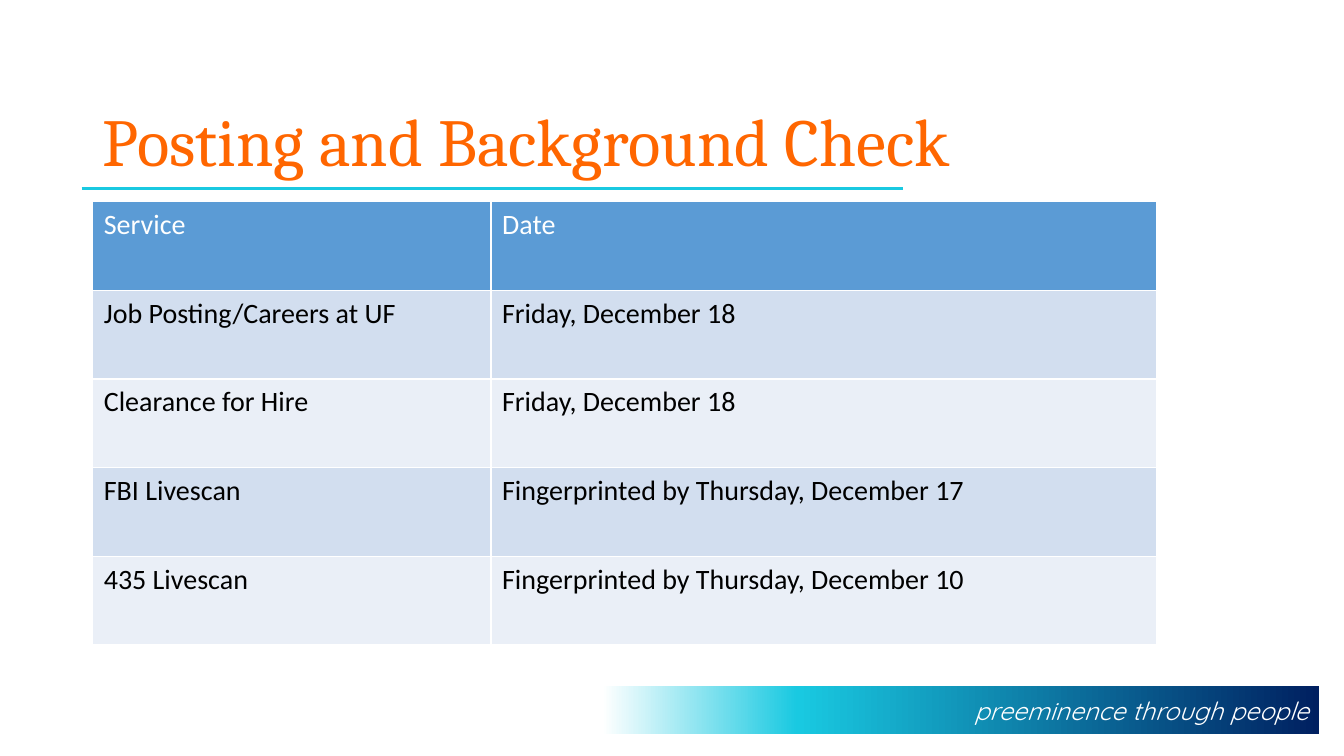
import copy

import pptx
import pptx.dml.color
import pptx.enum.shapes
import pptx.enum.text
import pptx.oxml.ns
import pptx.util
from lxml import etree

PX = 9144
WHITE, ORANGE, TEAL, NAVY = "FFFFFF", "FF6600", "19C9E1", "002060"
HEADER, BANDS = "5B9BD5", ("D2DEEF", "EAEFF7")
ROWS = [
    ("Service", "Date"),
    ("Job Posting/Careers at UF", "Friday, December 18"),
    ("Clearance for Hire", "Friday, December 18"),
    ("FBI Livescan", "Fingerprinted by Thursday, December 17"),
    ("435 Livescan", "Fingerprinted by Thursday, December 10"),
]


def px(*lengths):
    """Turn px lengths into a list of EMU."""
    return [pptx.util.Emu(length * PX) for length in lengths]


def color(value):
    """Turn a hex string into a colour."""
    return pptx.dml.color.RGBColor.from_string(value)


def style(run, name, size, hex_color, italic=False):
    """Set the font of a run."""
    run.font.name, run.font.size = name, pptx.util.Pt(size)
    run.font.bold, run.font.italic = False, italic
    run.font.color.rgb = color(hex_color)


def add_title(slide, left, top, width, height):
    """Place the title in its box and the rule just under it."""
    box = slide.shapes.add_textbox(*px(left, top, width, height))
    frame = box.text_frame
    frame.word_wrap = True
    frame.vertical_anchor = pptx.enum.text.MSO_ANCHOR.BOTTOM
    frame.text = "Posting and Background Check"
    frame.paragraphs[0].line_spacing = 0.9
    style(frame.paragraphs[0].runs[0], "Cambria", 48, ORANGE)

    rule_left, rule_top = left - 11, top + height + 2
    rule = slide.shapes.add_connector(
        pptx.enum.shapes.MSO_CONNECTOR.STRAIGHT,
        *px(rule_left, rule_top, rule_left + 815, rule_top))
    rule.line.color.rgb = color(TEAL)
    rule.line.width = pptx.util.Pt(2)
    etree.SubElement(rule._element.spPr, pptx.oxml.ns.qn("a:effectLst"))


def add_banner(slide, left, top, width, height):
    """Fill the box with the gradient footer and its tagline."""
    banner = slide.shapes.add_shape(
        pptx.enum.shapes.MSO_SHAPE.RECTANGLE, *px(left, top, width, height))
    banner.shadow.inherit = False
    banner.line.fill.background()
    banner.fill.gradient()
    banner.fill.gradient_angle = 180
    stop_list = banner._element.spPr.find(".//" + pptx.oxml.ns.qn("a:gsLst"))
    stop_list.append(copy.deepcopy(stop_list[0]))
    stops = zip(banner.fill.gradient_stops, (0, 0.72, 0.99), (NAVY, TEAL, WHITE))
    for stop, position, hex_color in stops:
        stop.position = position
        stop.color.rgb = color(hex_color)

    frame = banner.text_frame
    frame.word_wrap = True
    frame.vertical_anchor = pptx.enum.text.MSO_ANCHOR.MIDDLE
    frame.text = "preeminence through people"
    paragraph = frame.paragraphs[0]
    paragraph.alignment = pptx.enum.text.PP_ALIGN.RIGHT
    style(paragraph.runs[0], "Quicksand", 18, WHITE, italic=True)


def add_border(cell, side):
    """Draw one white border of a cell."""
    properties = cell._tc.get_or_add_tcPr()
    line = etree.SubElement(properties, pptx.oxml.ns.qn("a:ln" + side),
                            w=str(pptx.util.Pt(1)))
    fill = etree.SubElement(line, pptx.oxml.ns.qn("a:solidFill"))
    etree.SubElement(fill, pptx.oxml.ns.qn("a:srgbClr"), val=WHITE)


def add_dates(slide, left, top, width, height):
    """Fill the box with the table of services and dates."""
    table = slide.shapes.add_table(
        len(ROWS), 2, *px(left, top, width, height)).table
    table.columns[0].width, table.columns[1].width = px(395, width - 395)
    for row_index, texts in enumerate(ROWS):
        is_header = row_index == 0
        for column_index, text in enumerate(texts):
            cell = table.cell(row_index, column_index)
            cell.margin_left, cell.margin_top = px(11, 6)
            cell.margin_right, cell.margin_bottom = px(11, 6)
            for side in "LRTB":
                add_border(cell, side)
            cell.fill.solid()
            cell.fill.fore_color.rgb = color(
                HEADER if is_header else BANDS[(row_index - 1) % 2])
            cell.text_frame.text = text
            style(cell.text_frame.paragraphs[0].runs[0], "Calibri", 20,
                  WHITE if is_header else "000000")


def main():
    """Build the slide and save it."""
    presentation = pptx.Presentation()
    presentation.slide_width, presentation.slide_height = px(1333, 750)
    slide = presentation.slides.add_slide(presentation.slide_layouts[6])
    add_title(slide, 92, 40, 1150, 145)
    add_banner(slide, 590, 681, 718, 47)
    add_dates(slide, 92, 200, 1055, 440)
    presentation.save("out.pptx")


if __name__ == "__main__":
    main()
